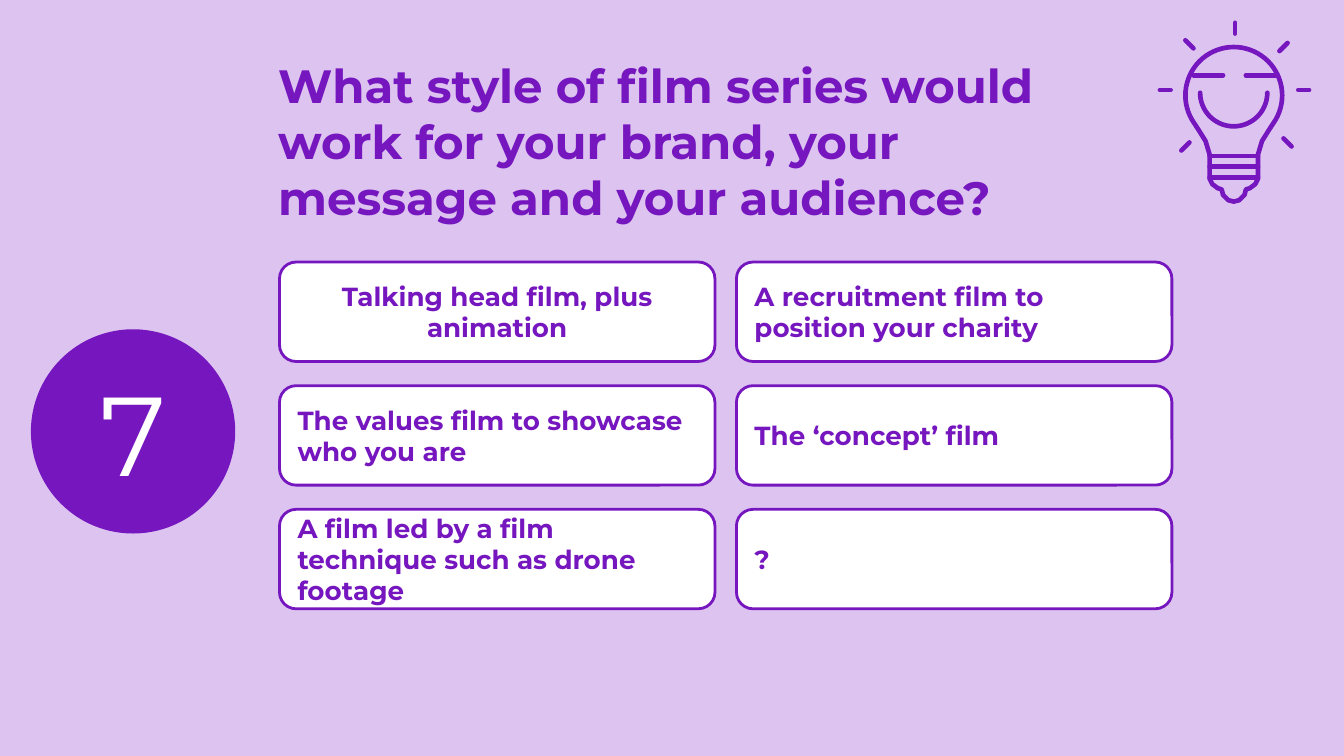
from dataclasses import dataclass
from math import cos, radians, sin

from lxml.etree import SubElement
from pptx import Presentation
from pptx.dml.color import RGBColor
from pptx.enum.shapes import MSO_CONNECTOR, MSO_SHAPE
from pptx.enum.text import MSO_ANCHOR, MSO_AUTO_SIZE, PP_ALIGN
from pptx.oxml.ns import qn
from pptx.util import Inches, Pt


@dataclass(frozen=True)
class Theme:
    purple: RGBColor = RGBColor(0x75, 0x16, 0xBE)
    lilac: RGBColor = RGBColor(0xDD, 0xC4, 0xF0)
    white: RGBColor = RGBColor(0xFF, 0xFF, 0xFF)
    font: str = "Montserrat"
    title: Pt = Pt(25)
    body: Pt = Pt(14)
    number: Pt = Pt(60)
    border: Pt = Pt(1.5)
    stroke: Pt = Pt(2.5)


THEME = Theme()

ANSWERS = [
    ("Talking head film, plus animation", PP_ALIGN.CENTER),
    ("A recruitment film to position your charity", PP_ALIGN.LEFT),
    ("The values film to showcase who you are", PP_ALIGN.LEFT),
    ("The ‘concept’ film", PP_ALIGN.LEFT),
    ("A film led by a film technique such as drone footage", PP_ALIGN.LEFT),
    ("?", PP_ALIGN.LEFT),
]
GRID_LEFT, GRID_TOP = 2.08, 1.95
COLUMN_PITCH, ROW_PITCH = 3.4, 0.92
BOX_WIDTH, BOX_HEIGHT = 3.24, 0.74

BULB_X, BULB_Y, BULB_RADIUS = 9.18, 0.71, 0.36
BULB_SIDE = [
    (0.26, 0.97), (0.21, 1.05), (0.18, 1.15), (0.18, 1.33), (0.16, 1.37),
    (0.12, 1.4), (0.09, 1.41), (0.08, 1.45), (0.04, 1.49), (0, 1.5),
]
BULB_LINES = [
    (8.88, 0.56, 9.1, 0.56), (9.27, 0.56, 9.49, 0.56),
    (9, 1.16, 9.36, 1.16), (9, 1.24, 9.36, 1.24), (9, 1.32, 9.36, 1.32),
]
RAYS = [
    (9.66, 0.67, 9.74, 0.67), (8.63, 0.67, 8.71, 0.67),
    (9.55, 1.03, 9.61, 1.09), (9.19, 0.17, 9.19, 0.25),
    (8.82, 0.3, 8.88, 0.36), (8.79, 1.12, 8.85, 1.06),
    (9.52, 0.38, 9.58, 0.32),
]


def style_text(tf, text, size, color, align, bold=False):
    tf.word_wrap = True
    tf.text = text
    p = tf.paragraphs[0]
    p.alignment = align
    p.font.name = THEME.font
    p.font.size = size
    p.font.bold = bold
    p.font.color.rgb = color
    return p


def set_margins(tf, margin):
    tf.margin_left = tf.margin_right = margin
    tf.margin_top = tf.margin_bottom = margin


def add_title(slide, text):
    sp = slide.shapes.title
    sp.left, sp.top = Inches(2.07), Inches(0.42)
    sp.width, sp.height = Inches(6.34), Inches(0.66)
    tf = sp.text_frame
    tf.auto_size = MSO_AUTO_SIZE.NONE
    tf.vertical_anchor = MSO_ANCHOR.TOP
    set_margins(tf, 0)
    p = style_text(tf, text, THEME.title, THEME.purple, PP_ALIGN.LEFT, True)
    p.space_after = Pt(10)


def add_panel(slide, kind, left, top, width, height, fill):
    sp = slide.shapes.add_shape(
        kind, Inches(left), Inches(top), Inches(width), Inches(height))
    sp.shadow.inherit = False
    sp.fill.solid()
    sp.fill.fore_color.rgb = fill
    sp.line.color.rgb = THEME.purple
    sp.line.width = THEME.border
    sp.text_frame.vertical_anchor = MSO_ANCHOR.MIDDLE
    set_margins(sp.text_frame, Inches(0.1))
    return sp


def add_number(slide, text):
    sp = add_panel(slide, MSO_SHAPE.OVAL, 0.23, 2.45, 1.52, 1.52, THEME.purple)
    sp.line.fill.background()
    style_text(sp.text_frame, text, THEME.number, THEME.white, PP_ALIGN.CENTER)


def add_answers(slide):
    for i, (text, align) in enumerate(ANSWERS):
        row, col = divmod(i, 2)
        sp = add_panel(
            slide, MSO_SHAPE.ROUNDED_RECTANGLE,
            GRID_LEFT + col * COLUMN_PITCH, GRID_TOP + row * ROW_PITCH,
            BOX_WIDTH, BOX_HEIGHT, THEME.white)
        style_text(sp.text_frame, text, THEME.body, THEME.purple, align, True)


def style_stroke(sp):
    sp.line.color.rgb = THEME.purple
    sp.line.width = THEME.stroke
    ln = sp._element.spPr.find(qn("a:ln"))
    ln.set("cap", "rnd")
    SubElement(ln, qn("a:round"))


def add_stroke(group, x1, y1, x2, y2):
    line = group.shapes.add_connector(
        MSO_CONNECTOR.STRAIGHT, Inches(x1), Inches(y1), Inches(x2), Inches(y2))
    style_stroke(line)
    SubElement(line._element.spPr, qn("a:effectLst"))


def add_curve(group, points, close):
    pts = [(Inches(x), Inches(y)) for x, y in points]
    builder = group.shapes.build_freeform(*pts[0])
    builder.add_line_segments(pts[1:], close=close)
    sp = builder.convert_to_shape()
    sp.shadow.inherit = False
    sp.fill.background()
    style_stroke(sp)


def arc(x, y, radius, start, end, step=5):
    return [(x + radius * cos(radians(a)), y + radius * sin(radians(a)))
            for a in range(start, end + 1, step)]


def add_bulb(slide):
    group = slide.shapes.add_group_shape()
    glass = arc(BULB_X, BULB_Y, BULB_RADIUS, 150, 390)
    right = [(BULB_X + dx, y) for dx, y in BULB_SIDE]
    left = [(BULB_X - dx, y) for dx, y in reversed(BULB_SIDE[:-1])]
    add_curve(group, glass + right + left, True)
    add_curve(group, arc(BULB_X, 0.69, 0.25, 0, 180), False)
    for ends in BULB_LINES + RAYS:
        add_stroke(group, *ends)


def main():
    prs = Presentation()
    prs.slide_width = Inches(10)
    prs.slide_height = prs.slide_width * 9 // 16
    slide = prs.slides.add_slide(prs.slide_layouts[5])
    slide.background.fill.solid()
    slide.background.fill.fore_color.rgb = THEME.lilac
    add_number(slide, "7")
    add_answers(slide)
    add_bulb(slide)
    add_title(slide, "What style of film series would work for your brand, "
                     "your message and your audience?")
    prs.save("out.pptx")


if __name__ == "__main__":
    main()
